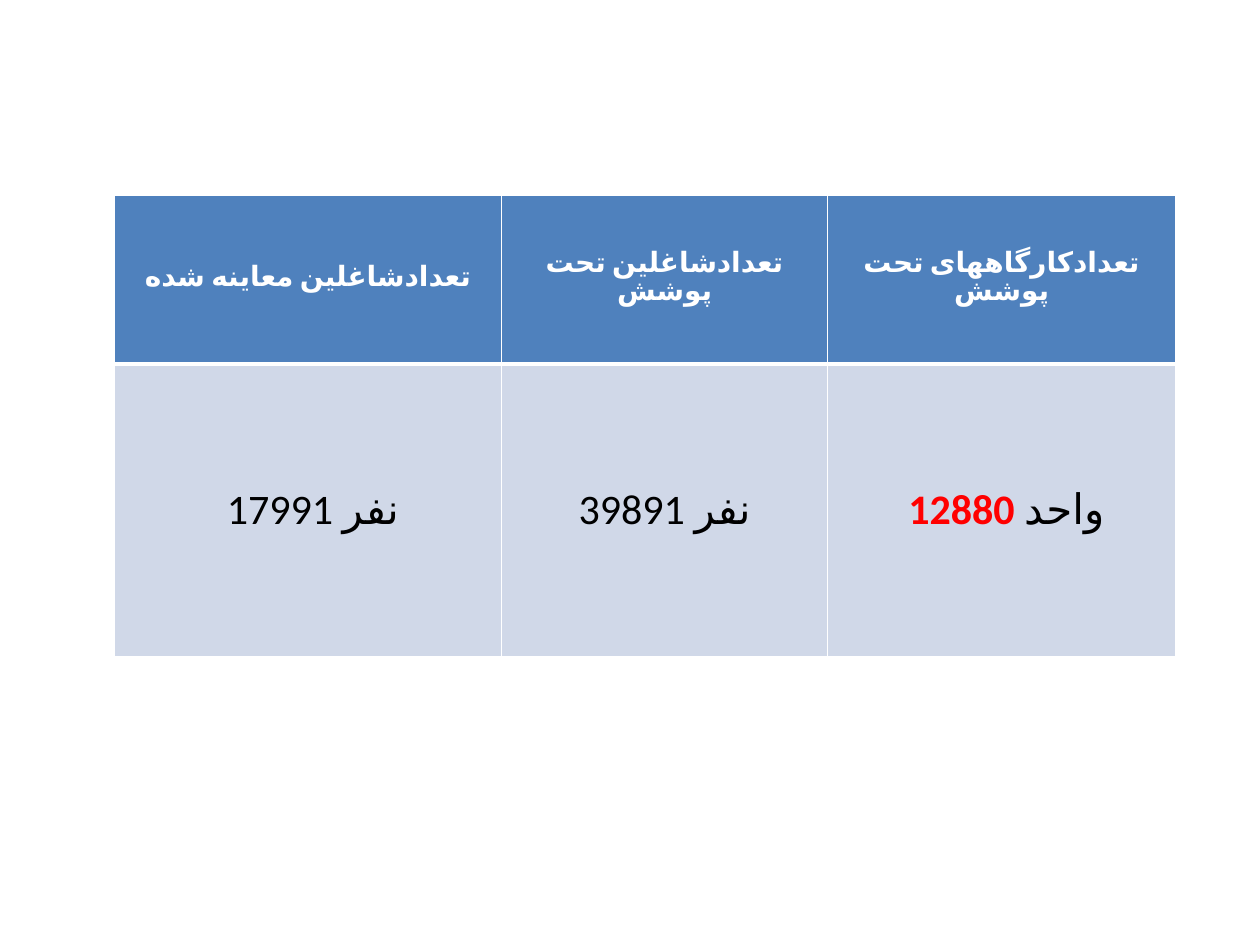
from lxml import etree
from pptx import Presentation
from pptx import util as u
from pptx.dml.color import RGBColor
from pptx.enum import text
from pptx.oxml import ns

WHITE = RGBColor(0xFF, 0xFF, 0xFF)
BLACK = RGBColor(0x00, 0x00, 0x00)
RED = RGBColor(0xFF, 0x00, 0x00)
HEADER_BLUE = RGBColor(0x4F, 0x81, 0xBD)
BODY_BLUE = RGBColor(0xD0, 0xD8, 0xE8)

HEADING = {"size": u.Pt(16), "bold": True, "color": WHITE}
FIGURE = {"size": u.Pt(24), "bold": False, "color": BLACK}
HIGHLIGHT = {"size": u.Pt(24), "bold": True, "color": RED}

# Each cell is a list of (wording, format) runs
HEADINGS = [
    [("تعدادشاغلین معاینه شده", HEADING)],
    [("تعدادشاغلین تحت پوشش", HEADING)],
    [("تعدادکارگاههای تحت پوشش", HEADING)],
]
FIGURES = [
    [(" 17991 نفر", FIGURE)],
    [("39891 نفر", FIGURE)],
    [(" 12880 ", HIGHLIGHT), ("واحد", FIGURE)],
]
COLUMN_WIDTHS = [3.07, 2.59, 2.76]
ROW_HEIGHTS = [1.34, 2.32]


class CoverageSlide:
    font_name = "Calibri"
    language = "fa-IR"

    def __init__(self, presentation):
        self.slide = presentation.slides.add_slide(presentation.slide_layouts[6])

    def run(self, paragraph, wording, style):
        run = paragraph.add_run()
        run.text = wording
        run.font.name = self.font_name
        for attribute, value in style.items():
            if attribute == "color":
                run.font.color.rgb = value
            else:
                setattr(run.font, attribute, value)
        # Persian letters take the complex-script font
        properties = run._r.get_or_add_rPr()
        properties.set("lang", self.language)
        etree.SubElement(properties, ns.qn("a:cs"), typeface=self.font_name)

    def border(self, cell, side, points):
        properties = cell._tc.get_or_add_tcPr()
        line = etree.SubElement(properties, ns.qn(f"a:ln{side}"), w=str(u.Pt(points)))
        fill = etree.SubElement(line, ns.qn("a:solidFill"))
        etree.SubElement(fill, ns.qn("a:srgbClr"), val=str(WHITE))

    def cell(self, cell, runs, fill, borders, spacing):
        # Borders come before the fill in the cell properties
        for side, points in borders.items():
            self.border(cell, side, points)
        cell.fill.solid()
        cell.fill.fore_color.rgb = fill
        cell.vertical_anchor = text.MSO_ANCHOR.MIDDLE
        paragraph = cell.text_frame.paragraphs[0]
        paragraph.alignment = text.PP_ALIGN.CENTER
        paragraph.line_spacing = spacing
        for wording, style in runs:
            self.run(paragraph, wording, style)

    def table(self, left, top, widths, heights, rows):
        table = self.slide.shapes.add_table(
            len(heights), len(widths), u.Inches(left), u.Inches(top),
            u.Inches(sum(widths)), u.Inches(sum(heights))).table
        table.first_row = table.horz_banding = False
        for column, width in zip(table.columns, widths):
            column.width = u.Inches(width)
        for row, height, (contents, *style) in zip(table.rows, heights, rows):
            row.height = u.Inches(height)
            for cell, runs in zip(row.cells, contents):
                self.cell(cell, runs, *style)


def main():
    presentation = Presentation()
    presentation.slide_width = u.Inches(10)
    presentation.slide_height = u.Inches(7.5)
    coverage = CoverageSlide(presentation)

    # Workplaces and workers covered, with a heavy rule under the headings
    thin = {"L": 1, "R": 1, "T": 1, "B": 1}
    coverage.table(0.91, 1.55, COLUMN_WIDTHS, ROW_HEIGHTS, [
        (HEADINGS, HEADER_BLUE, {**thin, "B": 3}, u.Pt(16)),
        (FIGURES, BODY_BLUE, {**thin, "T": 3}, None),
    ])
    presentation.save("out.pptx")


if __name__ == "__main__":
    main()
